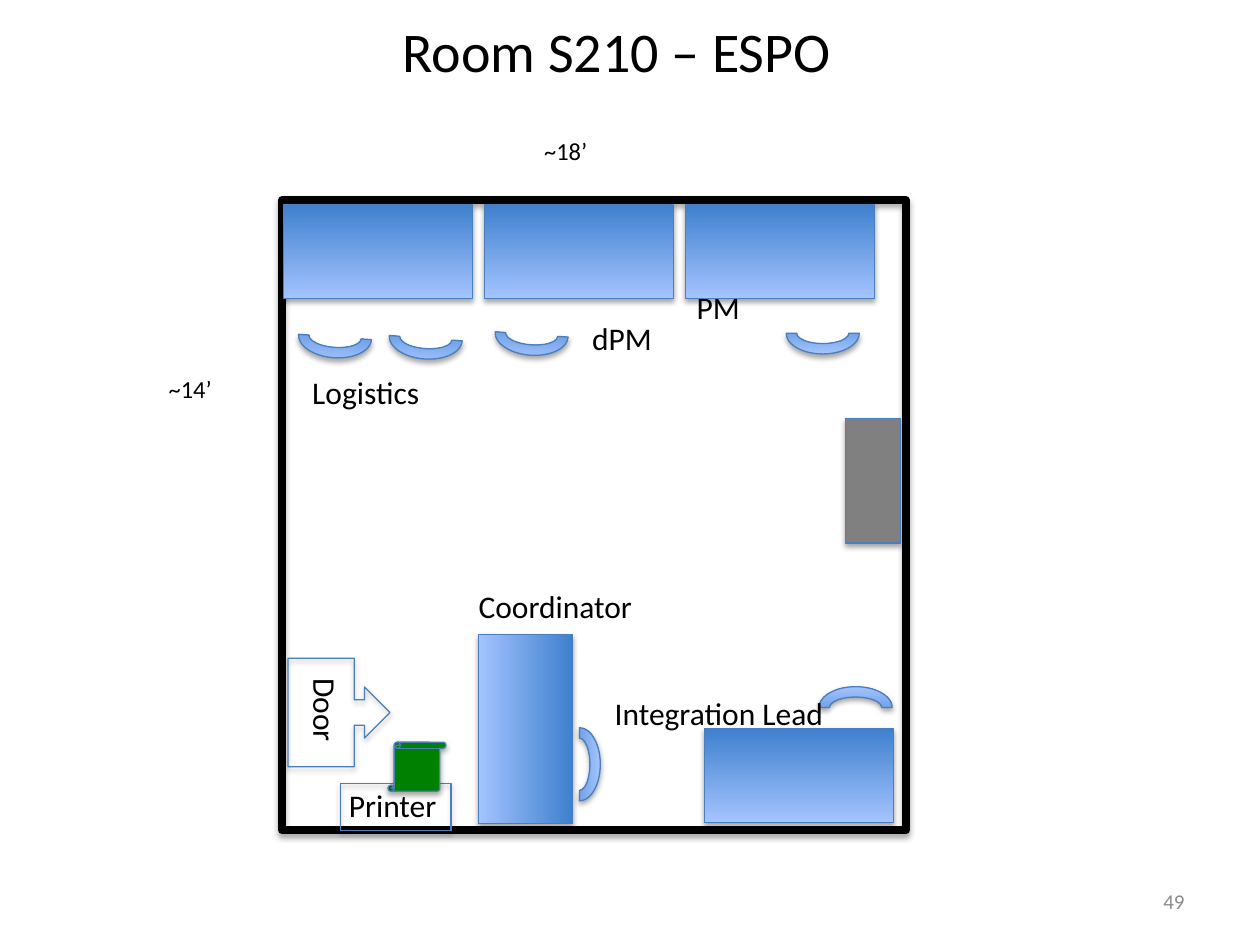
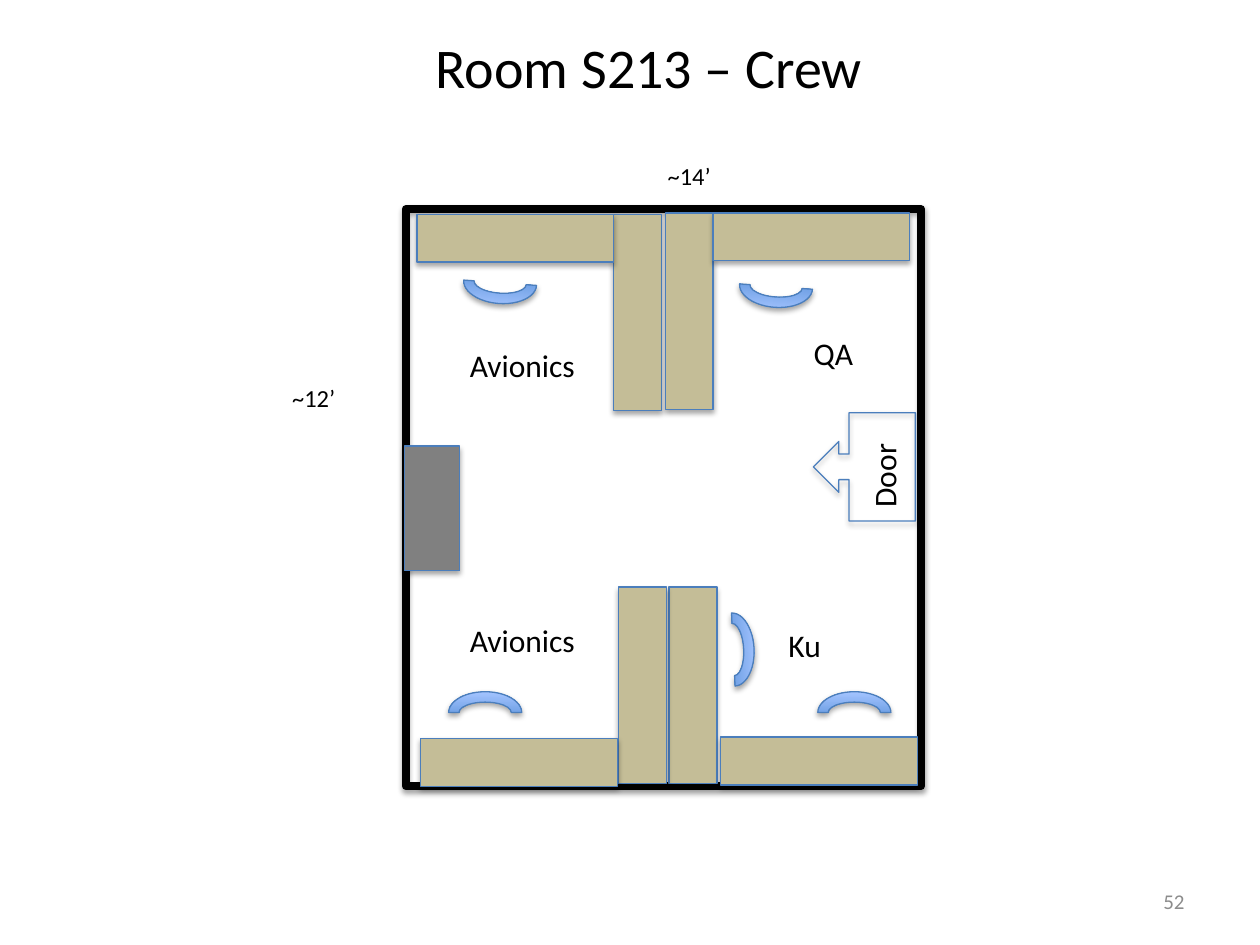
from lxml import etree
from pptx import Presentation
from pptx import util as u
from pptx.dml.color import RGBColor
from pptx.enum import shapes, text
from pptx.oxml.ns import qn

BLACK = RGBColor(0x00, 0x00, 0x00)
EDGE = RGBColor(0x4B, 0x7E, 0xBC)
BLUE_DARK = RGBColor(0x3F, 0x80, 0xCE)
BLUE_LIGHT = RGBColor(0xA4, 0xC4, 0xFF)
TAN = RGBColor(0xC4, 0xBD, 0x97)
GREY = RGBColor(0x80, 0x80, 0x80)
GREEN = RGBColor(0x00, 0x80, 0x00)
FOOTER_GREY = RGBColor(0x8C, 0x8C, 0x8C)
BLUE = (BLUE_DARK, BLUE_LIGHT)
FONT = "Calibri"
KIND = shapes.MSO_SHAPE

# Sizes in inches
CHAIR = (0.58, 0.33)
CABINET = (0.44, 0.99)
DOOR = (0.86, 0.81)
DOOR_LABEL = (0.79, 0.4)
LABEL_H, DIM_H = 0.4, 0.34
DESK = (1.5, 0.75)
BENCH_LONG, BENCH_DEEP = 1.56, 0.38
ACROSS, UPRIGHT = (BENCH_LONG, BENCH_DEEP), (BENCH_DEEP, BENCH_LONG)
DESK_PITCH = 1.595
TILT = 4.2

# Content: chairs are (left, top, turn), labels (text, left, top, width),
# desks (left, top, size, turn), extras (kind, box, fill)
ROOMS = [
    dict(
        title="Room S210 – ESPO", title_box=(0.47, 0, 8.85, 0.79), page="49",
        walls=(2.24, 1.59, 4.95, 5),
        dims=[("~14’", 1.24, 2.92, 0.66), ("~18’", 4.22, 1.03, 0.66)],
        chairs=[(6.5, 5.45, 180), (4.31, 5.9, 270), (2.37, 2.51, TILT),
                (6.24, 2.48, 0), (3.93, 2.49, TILT), (3.09, 2.52, TILT)],
        cabinet=(6.71, 3.32),
        labels=[("Printer", 2.67, 6.19, 0.91), ("Coordinator", 3.7, 4.61, 1.44),
                ("PM", 5.43, 2.24, 0.55), ("Integration Lead", 4.78, 5.46, 1.88),
                ("dPM", 4.6, 2.48, 0.68), ("Logistics", 2.38, 2.91, 1.06)],
        door=(2.26, 5.25, 90), door_label=(2.19, 5.48),
        desk_fill=BLUE,
        desks=[(2.25 + i * DESK_PITCH, 1.62, DESK, 180) for i in range(3)]
        + [(5.59, 5.78, DESK, 180), (3.42, 5.41, DESK, 270)],
        extras=[(KIND.RECTANGLE, (2.7, 6.22, 0.88, 0.37), None),
                (KIND.VERTICAL_SCROLL, (3.08, 5.89, 0.46, 0.39), GREEN)],
    ),
    dict(
        title="Room S213 – Crew", title_box=(0.65, 0, 9, 1.05), page="52",
        walls=(3.22, 1.66, 4.09, 4.58),
        dims=[("~12’", 2.22, 2.99, 0.66), ("~14’", 5.2, 1.23, 1.04)],
        chairs=[(3.56, 5.49, 180), (3.68, 2.08, TILT), (5.87, 2.11, TILT),
                (6.49, 5.49, 180), (5.53, 4.99, 267.2)],
        cabinet=(3.21, 3.54),
        labels=[("QA", 6.36, 2.6, 0.52), ("Ku", 6.16, 4.92, 0.47),
                ("Avionics", 3.63, 2.7, 1.05), ("Avionics", 3.63, 4.88, 1.05)],
        door=(6.43, 3.3, 270), door_label=(6.62, 3.53),
        desk_fill=TAN,
        desks=[(4.87, 1.7, UPRIGHT, 0), (5.28, 1.69, UPRIGHT, 0),
               (5.31, 4.66, UPRIGHT, 0), (4.91, 4.66, UPRIGHT, 0),
               (5.72, 5.85, ACROSS, 0), (3.34, 5.86, ACROSS, 0),
               (3.31, 1.7, ACROSS, 0), (5.66, 1.69, ACROSS, 0)],
        extras=[],
    ),
]


def inches(box):
    return [u.Inches(v) for v in box]


def add_shadow(sp):
    sp.shadow.inherit = False
    effects = sp._element.spPr.find(qn("a:effectLst"))
    shadow = etree.SubElement(
        effects, qn("a:outerShdw"), blurRad=str(u.Pt(3.1)), dist=str(u.Pt(1.8)),
        dir="5400000", rotWithShape="0")
    color = etree.SubElement(shadow, qn("a:srgbClr"), val=str(BLACK))
    etree.SubElement(color, qn("a:alpha"), val="35000")


def add_part(slide, kind, box, fill=None, turn=0, line=EDGE, weight=0.75):
    """Add a shape; fill is None, one colour or a pair for a gradient."""
    sp = slide.shapes.add_shape(kind, *inches(box))
    sp.rotation = turn
    if fill is None:
        sp.fill.background()
    elif fill is BLUE:
        sp.fill.gradient()
        sp.fill.gradient_angle = 90
        for stop, color in zip(sp.fill.gradient_stops, fill):
            stop.color.rgb = color
    else:
        sp.fill.solid()
        sp.fill.fore_color.rgb = fill
    sp.line.color.rgb = line
    sp.line.width = u.Pt(weight)
    add_shadow(sp)
    return sp


def add_chair(slide, left, top, turn):
    sp = add_part(slide, KIND.BLOCK_ARC, (left, top, *CHAIR), BLUE, turn)
    xfrm = sp._element.spPr.find(qn("a:xfrm"))
    xfrm.set("flipH", "1")
    xfrm.set("flipV", "1")


def write(tf, words, size, color=BLACK, align=None):
    p = tf.paragraphs[0]
    p.alignment = align
    r = p.add_run()
    r.text = words
    r.font.name, r.font.size = FONT, u.Pt(size)
    r.font.color.rgb = color


def add_label(slide, words, box, size=18, wrap=False, turn=0, **style):
    sp = slide.shapes.add_textbox(*inches(box))
    sp.rotation = turn
    sp.text_frame.word_wrap = wrap
    write(sp.text_frame, words, size, **style)
    return sp


def add_title(slide, words, box):
    sp = slide.shapes.title
    sp.left, sp.top, sp.width, sp.height = inches(box)
    sp.text_frame.vertical_anchor = text.MSO_ANCHOR.MIDDLE
    write(sp.text_frame, words, 32, align=text.PP_ALIGN.CENTER)


def build_room(prs, room):
    slide = prs.slides.add_slide(prs.slide_layouts[5])
    add_title(slide, room["title"], room["title_box"])

    # Walls and their lengths
    add_part(slide, KIND.RECTANGLE, room["walls"], line=BLACK, weight=4.5)
    for words, left, top, width in room["dims"]:
        add_label(slide, words, (left, top, width, DIM_H), 14, wrap=True)

    # Seats, cabinet and names
    for chair in room["chairs"]:
        add_chair(slide, *chair)
    add_part(slide, KIND.RECTANGLE, (*room["cabinet"], *CABINET), GREY)
    for words, left, top, width in room["labels"]:
        add_label(slide, words, (left, top, width, LABEL_H))

    # Door
    left, top, turn = room["door"]
    add_part(slide, KIND.UP_ARROW_CALLOUT, (left, top, *DOOR), turn=turn)
    add_label(slide, "Door", (*room["door_label"], *DOOR_LABEL), wrap=True, turn=turn)

    # Desks and printer
    for left, top, size, turn in room["desks"]:
        add_part(slide, KIND.RECTANGLE, (left, top, *size), room["desk_fill"], turn)
    for kind, box, fill in room["extras"]:
        add_part(slide, kind, box, fill)

    # Page number
    sp = add_label(slide, room["page"], (7.17, 6.95, 2.33, 0.4), 12, wrap=True,
                   color=FOOTER_GREY, align=text.PP_ALIGN.RIGHT)
    sp.text_frame.vertical_anchor = text.MSO_ANCHOR.MIDDLE


def main():
    prs = Presentation()
    prs.slide_width, prs.slide_height = u.Inches(10), u.Inches(7.5)
    for room in ROOMS:
        build_room(prs, room)
    prs.save("out.pptx")


if __name__ == "__main__":
    main()
